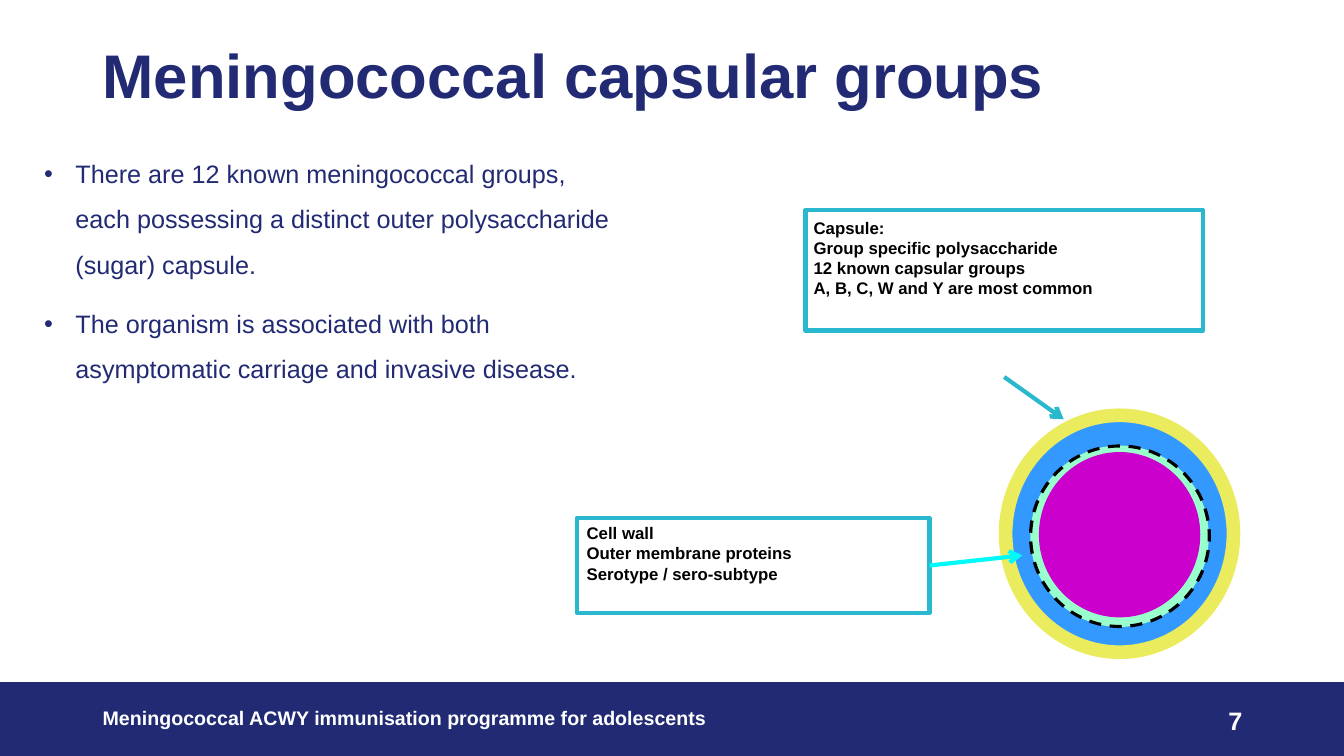
import math

from lxml import etree
from pptx import Presentation, util as u
from pptx.dml import color
from pptx.enum import shapes, text
from pptx.oxml import ns

NAVY, TEAL, CYAN, WHITE, BLACK = "212A73", "29B8CE", "00F9F9", "FFFFFF", "000000"
RECTANGLE, OVAL = shapes.MSO_SHAPE.RECTANGLE, shapes.MSO_SHAPE.OVAL

presentation = Presentation()
presentation.slide_width, presentation.slide_height = u.Inches(13.33), u.Inches(7.5)
slide = presentation.slides.add_slide(presentation.slide_layouts[6])
cell = presentation.slide_height / 90  # the slide is 160 columns by 90 rows


def paint(target, value):
    """Give a fill, or the fill of a line, one solid colour."""
    target.solid()
    target.fore_color.rgb = color.RGBColor.from_string(value)


def add_box(grid, lines=(), kind=None, fill=None, line=None, width=1,
            ink=BLACK, size=12, bold=True, frame={}, layout={}):
    """Add a preset shape, or a text box if kind is None, at grid cells."""
    place = [u.Emu(round(value * cell)) for value in grid]
    if kind is None:
        shape = slide.shapes.add_textbox(*place)
    else:
        shape = slide.shapes.add_shape(kind, *place)
        shape.shadow.inherit = False
        paint(shape.fill, fill)
        if line:
            paint(shape.line.fill, line)
            shape.line.width = u.Pt(width)
        else:
            shape.line.fill.background()
    defaults = {"word_wrap": True, "vertical_anchor": text.MSO_ANCHOR.TOP}
    for name, value in {**defaults, **frame}.items():
        setattr(shape.text_frame, name, value)
    for index, words in enumerate(lines):
        paragraph = (shape.text_frame.add_paragraph() if index
                     else shape.text_frame.paragraphs[0])
        for name, value in {"alignment": text.PP_ALIGN.LEFT, **layout}.items():
            setattr(paragraph, name, value)
        run = paragraph.add_run()
        run.text = words
        for name, value in {"name": "Arial", "size": u.Pt(size), "bold": bold}.items():
            setattr(run.font, name, value)
        paint(run.font.fill, ink)
    return shape


# Title, bullets and footer
add_box((0, 81.24, 160, 8.76), kind=RECTANGLE, fill=NAVY, line=NAVY)
add_box((11.04, 4.8, 138, 17.4), ["Meningococcal capsular groups"],
        ink=NAVY, size=44, layout={"line_spacing": 0.9})
body = add_box((4.08, 16.44, 69.72, 35.04), [
    "There are 12 known meningococcal groups, each possessing a distinct outer "
    "polysaccharide (sugar) capsule.",
    "The organism is associated with both asymptomatic carriage and invasive disease.",
], ink=NAVY, size=18, bold=False, layout={"line_spacing": 1.5, "space_before": u.Pt(10)})
indent = u.Inches(0.31)
for paragraph in body.text_frame.paragraphs:
    properties = paragraph._p.get_or_add_pPr()
    properties.set("marL", str(indent))
    properties.set("indent", str(-indent))
    etree.SubElement(properties, ns.qn("a:buFont"), typeface="Arial")
    etree.SubElement(properties, ns.qn("a:buChar"), char="•")
add_box((113.04, 83.4, 36, 4.8), ["7"], ink=WHITE, size=18,
        layout={"alignment": text.PP_ALIGN.RIGHT})
add_box((11.04, 83.4, 96, 4.8),
        ["Meningococcal ACWY immunisation programme for adolescents"], ink=WHITE, size=14)

# Cell: capsule and wall, inner membrane, core
for middle_y, width, height, fill, line, weight in [
    (63.54, 27.12, 28.2, "3399FF", "EAEC5E", 9.75),
    (63.84, 21.24, 21.6, "99FFCC", None, 0),
    (63.66, 19.08, 19.56, "CC00CC", "CC00CC", 0.75),
]:
    add_box((133.25 - width / 2, middle_y - height / 2, width, height),
            kind=OVAL, fill=fill, line=line, width=weight)

# Dashed ring around the membrane
dashes, sweep, steps = 27, 7.8, 4
outer, inner = (10.83, 10.93), (10.44, 10.56)
for dash in range(dashes):
    angles = [math.radians(90 + dash * 360 / dashes + sweep * step / steps)
              for step in range(steps + 1)]
    points = [((133.3 + radius[0] * math.cos(angle)) * cell,
               (63.84 - radius[1] * math.sin(angle)) * cell)
              for radius, turn in ((outer, angles), (inner, angles[::-1]))
              for angle in turn]
    builder = slide.shapes.build_freeform(*points[0], scale=1.0)
    builder.add_line_segments(points[1:], close=True)
    shape = builder.convert_to_shape()
    shape.shadow.inherit = False
    paint(shape.fill, BLACK)
    shape.line.fill.background()

# Labels and their arrows
margins = ("margin_left", "margin_top", "margin_right", "margin_bottom")
add_box((95.88, 24.96, 47.28, 14.4), [
    "Capsule:", "Group specific polysaccharide", "12 known capsular groups",
    "A, B, C, W and Y are most common",
], RECTANGLE, WHITE, TEAL, 3, frame=dict.fromkeys(margins, u.Inches(0.08)))
add_box((68.64, 61.68, 42, 11.28),
        ["Cell wall", "Outer membrane proteins", "Serotype / sero-subtype"],
        RECTANGLE, WHITE, TEAL, 3)
for ends, ink in [((119.52, 44.88, 126.6, 49.92), TEAL),
                  ((110.64, 67.32, 121.68, 66.12), CYAN)]:
    arrow = slide.shapes.add_connector(
        shapes.MSO_CONNECTOR.STRAIGHT, *[u.Emu(round(value * cell)) for value in ends])
    paint(arrow.line.fill, ink)
    arrow.line.width = u.Pt(3)
    etree.SubElement(arrow.line._get_or_add_ln(), ns.qn("a:tailEnd"), type="arrow")
    etree.SubElement(arrow._element.spPr, ns.qn("a:effectLst"))

presentation.save("out.pptx")
